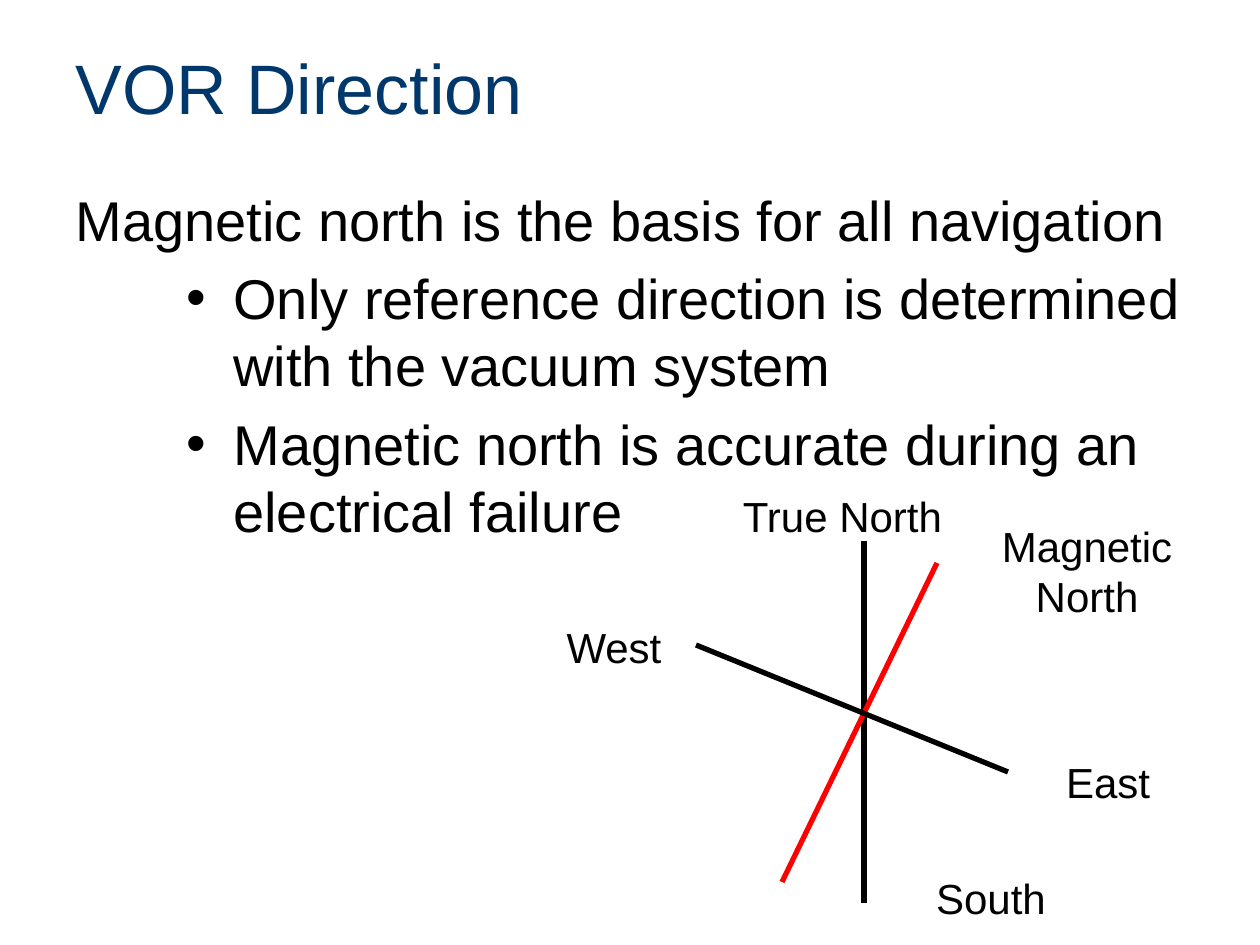
from lxml.etree import SubElement
from pptx import Presentation
from pptx.dml.color import RGBColor
from pptx.enum.shapes import MSO_CONNECTOR as Connector
from pptx.enum.text import MSO_ANCHOR as Anchor, MSO_AUTO_SIZE as AutoSize, PP_ALIGN as Align
from pptx.oxml.ns import qn
from pptx.util import Pt

PX_PER_INCH = 126
COLORS = {"title": "00386B", "text": "000000", "true": "000000", "magnetic": "FF0000"}
FONT = "Arial"
HANGING = 47
BULLET_MARGIN = 158


def px(value):
    return round(value * 914400 / PX_PER_INCH)


def color(name):
    return RGBColor.from_string(COLORS[name])


def format_paragraph(paragraph, size, color_name, align=Align.LEFT):
    paragraph.alignment = align
    for run in paragraph.runs:
        run.font.name = FONT
        run.font.size = Pt(size)
        run.font.color.rgb = color(color_name)


def set_indent(paragraph, margin, bullet=None):
    properties = paragraph._p.get_or_add_pPr()
    properties.set("marL", str(px(margin)))
    properties.set("indent", str(-px(HANGING)))
    if bullet:
        SubElement(properties, qn("a:buFont")).set("typeface", FONT)
        SubElement(properties, qn("a:buChar")).set("char", bullet)
    else:
        SubElement(properties, qn("a:buNone"))


def add_title(slide, text):
    title = slide.shapes.title
    title.left, title.top, title.width, title.height = px(63), px(38), px(1134), px(98)
    frame = title.text_frame
    frame.text = text
    frame.auto_size = AutoSize.NONE
    frame.vertical_anchor = Anchor.MIDDLE
    format_paragraph(frame.paragraphs[0], 40, "title")


def add_body(slide, heading, bullets):
    body = slide.shapes.add_textbox(px(63), px(179), px(1134), px(665))
    frame = body.text_frame
    frame.word_wrap = True
    frame.text = "\n".join([heading, *bullets])
    for index, paragraph in enumerate(frame.paragraphs):
        if index:
            paragraph.level = 1
            paragraph.space_before = Pt(6.4)
            set_indent(paragraph, BULLET_MARGIN, "•")
        else:
            set_indent(paragraph, HANGING)
        format_paragraph(paragraph, 32, "text")


def add_axis(group, start, end, color_name):
    axis = group.shapes.add_connector(Connector.STRAIGHT, *map(px, start + end))
    axis.line.color.rgb = color(color_name)
    axis.line.width = Pt(3)
    SubElement(axis._element.spPr, qn("a:effectLst"))


def add_label(group, text, left, top, width, height=63):
    label = group.shapes.add_textbox(px(left), px(top), px(width), px(height))
    frame = label.text_frame
    frame.word_wrap = True
    frame.auto_size = AutoSize.SHAPE_TO_FIT_TEXT
    frame.text = text
    format_paragraph(frame.paragraphs[0], 24, "text", Align.CENTER)


def add_compass(slide):
    group = slide.shapes.add_group_shape()
    add_axis(group, (864, 541), (864, 903), "true")
    add_axis(group, (782, 882), (937, 563), "magnetic")
    add_axis(group, (696, 645), (1008, 772), "true")
    add_label(group, "True North", 694, 484, 297)
    add_label(group, "Magnetic North", 940, 514, 294, 115)
    add_label(group, "East", 1018, 750, 180)
    add_label(group, "West", 532, 615, 164)
    add_label(group, "South", 874, 866, 234)


def main():
    presentation = Presentation()
    presentation.slide_width, presentation.slide_height = px(1260), px(945)
    slide = presentation.slides.add_slide(presentation.slide_layouts[5])
    add_title(slide, "VOR Direction")
    add_body(slide, "Magnetic north is the basis for all navigation", [
        "Only reference direction is determined with the vacuum system",
        "Magnetic north is accurate during an electrical failure",
    ])
    add_compass(slide)
    presentation.save("out.pptx")


if __name__ == "__main__":
    main()
